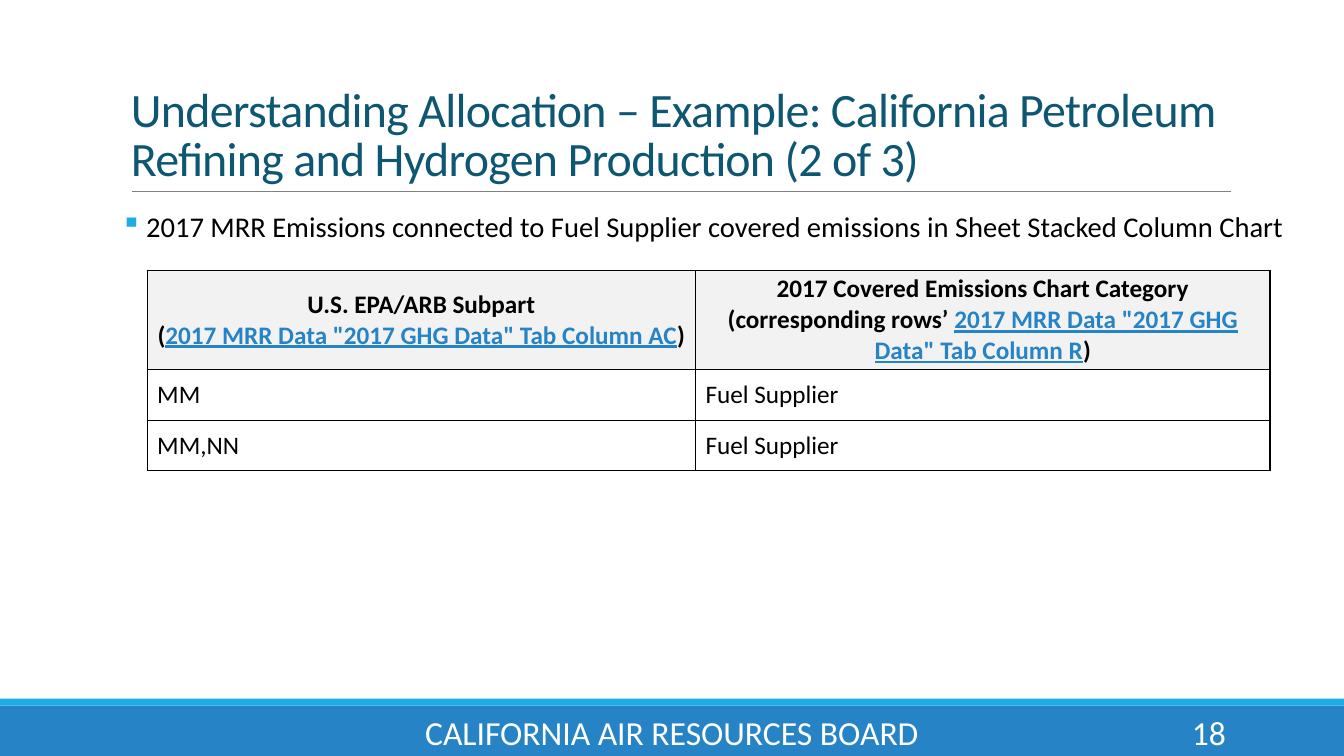
from dataclasses import dataclass
from typing import Optional

from lxml import etree
from pptx import Presentation
from pptx.dml.color import RGBColor
from pptx.enum.shapes import MSO_CONNECTOR, MSO_SHAPE
from pptx.enum.text import MSO_ANCHOR, PP_ALIGN
from pptx.oxml.ns import qn
from pptx.util import Inches, Pt

FONT = "Calibri"
BLUE, CYAN, BLACK, WHITE = "2683C6", "1CADE4", "000000", "FFFFFF"
TEAL, GRAY, HEADER_GRAY = "0E5772", "808080", "F2F2F2"


@dataclass
class Area:
    """Left, top, width and height as percentages of the slide."""
    left: float
    top: float
    width: float
    height: float


@dataclass
class Band:
    area: Area
    color: str


@dataclass
class Label:
    area: Area
    text: str
    size: float
    color: str
    anchor: MSO_ANCHOR = MSO_ANCHOR.MIDDLE
    align: PP_ALIGN = PP_ALIGN.LEFT
    side_margin: float = 0.1
    line_spacing: Optional[float] = None
    tracking: Optional[int] = None
    bullet: Optional[str] = None


@dataclass
class Heading:
    title: str
    lead: str
    reference: str


BANDS = [
    Band(Area(0, 93.33, 100, 6.67), BLUE),
    Band(Area(0, 92.4, 100, 0.93), CYAN),
]
LABELS = [
    Label(Area(30.23, 94.13, 39.53, 5.33), "CALIFORNIA AIR RESOURCES BOARD",
          24, WHITE, align=PP_ALIGN.CENTER),
    Label(Area(81.23, 94.13, 10.73, 5.33), "18", 24, WHITE, align=PP_ALIGN.RIGHT),
    Label(Area(9, 4.13, 82.5, 21.2),
          "Understanding Allocation – Example: California Petroleum "
          "Refining and Hydrogen Production (2 of 3)",
          34.2, TEAL, anchor=MSO_ANCHOR.BOTTOM, line_spacing=0.85, tracking=-50),
    Label(Area(9, 26.93, 89.48, 7.2),
          "2017 MRR Emissions connected to Fuel Supplier covered emissions "
          "in Sheet Stacked Column Chart",
          20.4, BLACK, anchor=MSO_ANCHOR.TOP, side_margin=0, bullet="▪"),
]
HEADINGS = [
    Heading("U.S. EPA/ARB Subpart", "(",
            '2017 MRR Data "2017 GHG Data" Tab Column AC'),
    Heading("2017 Covered Emissions Chart Category", "(corresponding rows’ ",
            '2017 MRR Data "2017 GHG Data" Tab Column R'),
]
ROWS = [("MM", "Fuel Supplier"), ("MM,NN", "Fuel Supplier")]
COLUMN_WIDTHS = [40.8, 42.75]
ROW_HEIGHTS = [13.2] + [6.67] * len(ROWS)

presentation = Presentation()
presentation.slide_width, presentation.slide_height = Inches(13.333), Inches(7.5)
slide = presentation.slides.add_slide(presentation.slide_layouts[6])


def rgb(color: str) -> RGBColor:
    return RGBColor.from_string(color)


def across(percent: float) -> int:
    return round(presentation.slide_width * percent / 100)


def down(percent: float) -> int:
    return round(presentation.slide_height * percent / 100)


def box(area: Area) -> tuple:
    return across(area.left), down(area.top), across(area.width), down(area.height)


def style(font, size: float, color: str, bold: bool = False) -> None:
    font.name, font.size, font.bold = FONT, Pt(size), bold
    font.color.rgb = rgb(color)


def indent(paragraph, left: float, first: float = 0) -> None:
    properties = paragraph._p.get_or_add_pPr()
    properties.set("marL", str(Inches(left)))
    properties.set("indent", str(Inches(first)))


def add_bullet(paragraph, symbol: str, color: str) -> None:
    properties = paragraph._p.get_or_add_pPr()
    bullet_color = etree.SubElement(properties, qn("a:buClr"))
    etree.SubElement(bullet_color, qn("a:srgbClr")).set("val", color)
    etree.SubElement(properties, qn("a:buChar")).set("char", symbol)


def draw_band(band: Band) -> None:
    shape = slide.shapes.add_shape(MSO_SHAPE.RECTANGLE, *box(band.area))
    shape.shadow.inherit = False
    shape.fill.solid()
    shape.fill.fore_color.rgb = rgb(band.color)
    shape.line.fill.background()


def draw_label(label: Label) -> None:
    frame = slide.shapes.add_textbox(*box(label.area)).text_frame
    frame.word_wrap = True
    frame.vertical_anchor = label.anchor
    frame.margin_left = frame.margin_right = Inches(label.side_margin)
    paragraph = frame.paragraphs[0]
    paragraph.alignment = label.align
    if label.line_spacing:
        paragraph.line_spacing = label.line_spacing
    if label.bullet:
        indent(paragraph, 0.25, -0.25)
        add_bullet(paragraph, label.bullet, CYAN)
    run = paragraph.add_run()
    run.text = label.text
    if label.tracking:
        run._r.get_or_add_rPr().set("spc", str(label.tracking))
    style(paragraph.font, label.size, label.color)


def draw_rule() -> None:
    line = slide.shapes.add_connector(
        MSO_CONNECTOR.STRAIGHT, across(9.83), down(25.33), across(91.58), down(25.33))
    line.line.color.rgb = rgb(GRAY)
    line.line.width = Pt(0.5)
    etree.SubElement(line._element.spPr, qn("a:effectLst"))


def prepare_cell(cell, fill: str) -> None:
    properties = cell._tc.get_or_add_tcPr()
    for side in ("a:lnL", "a:lnR", "a:lnT", "a:lnB"):
        border = etree.SubElement(properties, qn(side), w=str(Pt(1)))
        solid = etree.SubElement(border, qn("a:solidFill"))
        etree.SubElement(solid, qn("a:srgbClr")).set("val", BLACK)
    cell.fill.solid()
    cell.fill.fore_color.rgb = rgb(fill)
    cell.vertical_anchor = MSO_ANCHOR.MIDDLE
    cell.margin_left = cell.margin_right = cell.margin_top = cell.margin_bottom = 0


def fill_heading(cell, heading: Heading) -> None:
    prepare_cell(cell, HEADER_GRAY)
    title = cell.text_frame.paragraphs[0]
    title.add_run().text = heading.title
    source = cell.text_frame.add_paragraph()
    for text in (heading.lead, heading.reference, ")"):
        run = source.add_run()
        run.text = text
        is_reference = text == heading.reference
        style(run.font, 18, BLUE if is_reference else BLACK, bold=True)
        run.font.underline = is_reference
    style(title.font, 18, BLACK, bold=True)
    title.alignment = source.alignment = PP_ALIGN.CENTER


def fill_value(cell, text: str) -> None:
    prepare_cell(cell, WHITE)
    paragraph = cell.text_frame.paragraphs[0]
    paragraph.add_run().text = text
    indent(paragraph, 0.1)
    style(paragraph.font, 18, BLACK)


def draw_table() -> None:
    area = Area(10.95, 35.73, sum(COLUMN_WIDTHS), sum(ROW_HEIGHTS))
    table = slide.shapes.add_table(
        len(ROW_HEIGHTS), len(COLUMN_WIDTHS), *box(area)).table
    for column, width in zip(table.columns, COLUMN_WIDTHS):
        column.width = across(width)
    for row, height in zip(table.rows, ROW_HEIGHTS):
        row.height = down(height)
    for column_index, heading in enumerate(HEADINGS):
        fill_heading(table.cell(0, column_index), heading)
    for row_index, values in enumerate(ROWS, start=1):
        for column_index, text in enumerate(values):
            fill_value(table.cell(row_index, column_index), text)


# Footer bands and title rule
for band in BANDS:
    draw_band(band)
draw_rule()

# Footer, title and bullet text
for label in LABELS:
    draw_label(label)

# Subpart table
draw_table()

presentation.save("out.pptx")
